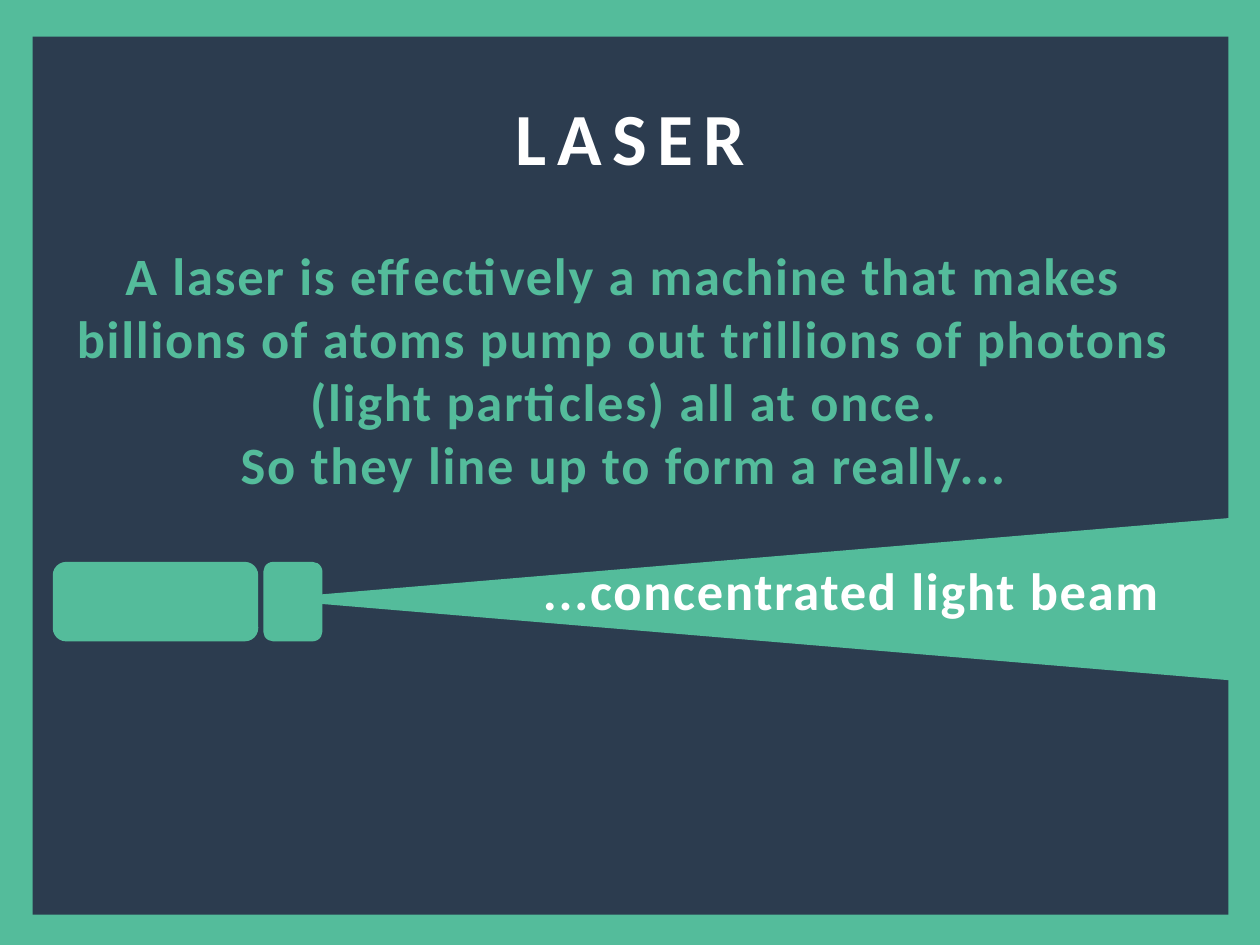
from pptx import Presentation
from pptx.dml.color import RGBColor
from pptx.enum.shapes import MSO_SHAPE
from pptx.enum.text import MSO_AUTO_SIZE, PP_ALIGN
from pptx.util import Pt

GREEN, NAVY, WHITE = "54BC9B", "2C3C4F", "FFFFFF"
PANEL_LEFT, PANEL_WIDTH = 18.7, 683.3
LASER_TOP, LASER_HEIGHT = 321.1, 45.4


def color(hex_value):
    return RGBColor.from_string(hex_value)


class SlideBuilder:
    font_format = {"name": "Calibri", "bold": True}

    def __init__(self, slide):
        self.slide = slide

    def background(self, hex_value):
        fill = self.slide.background.fill
        fill.solid()
        fill.fore_color.rgb = color(hex_value)

    def shape(self, kind, left, top, width, height, fill, rotation=0):
        shape = self.slide.shapes.add_shape(
            kind, Pt(left), Pt(top), Pt(width), Pt(height))
        shape.fill.solid()
        shape.fill.fore_color.rgb = color(fill)
        shape.line.fill.background()
        shape.shadow.inherit = False
        shape.rotation = rotation

    def text_box(self, left, top, width, height):
        box = self.slide.shapes.add_textbox(
            Pt(left), Pt(top), Pt(width), Pt(height))
        box.text_frame.word_wrap = True
        box.text_frame.auto_size = MSO_AUTO_SIZE.SHAPE_TO_FIT_TEXT
        return box.text_frame

    def paragraph(self, paragraph, text, size, hex_value, spacing,
                  space_before=0, indent=0):
        """Write centred text; spacing is the gap between letters in points."""
        paragraph.alignment = PP_ALIGN.CENTER
        paragraph.space_before = Pt(space_before)
        paragraph._p.get_or_add_pPr().set("marL", str(Pt(indent)))
        run = paragraph.add_run()
        run.text = text
        for name, value in {**self.font_format, "size": Pt(size)}.items():
            setattr(run.font, name, value)
        run.font.color.rgb = color(hex_value)
        run._r.get_or_add_rPr().set("spc", str(spacing * 100))


def main():
    presentation = Presentation()
    presentation.slide_width, presentation.slide_height = Pt(720), Pt(540)
    builder = SlideBuilder(
        presentation.slides.add_slide(presentation.slide_layouts[6]))

    builder.background(GREEN)
    builder.shape(MSO_SHAPE.RECTANGLE, PANEL_LEFT, 20.9, PANEL_WIDTH, 501.8, NAVY)

    title = builder.text_box(PANEL_LEFT, 49, PANEL_WIDTH, 58.3)
    builder.paragraph(title.paragraphs[0], "LASER", 42, WHITE, 6)

    for left, width in ((30.2, 117.4), (150.5, 33.8)):
        builder.shape(MSO_SHAPE.ROUNDED_RECTANGLE, left, LASER_TOP,
                      width, LASER_HEIGHT, GREEN)
    builder.shape(MSO_SHAPE.ISOSCELES_TRIANGLE, 384.5, 61.9, 94.3, 560.9,
                  GREEN, rotation=270)

    body = builder.text_box(PANEL_LEFT, 135.4, 675.4, 262)
    builder.paragraph(
        body.paragraphs[0],
        "A laser is effectively a machine that makes billions of atoms "
        "pump out trillions of photons (light particles) all at once.",
        30, GREEN, 1)
    builder.paragraph(body.add_paragraph(),
                      "So they line up to form a really...", 30, GREEN, 1)
    builder.paragraph(body.add_paragraph(), "...concentrated light beam",
                      30, WHITE, 1, space_before=36, indent=260)

    presentation.save("out.pptx")


if __name__ == "__main__":
    main()
